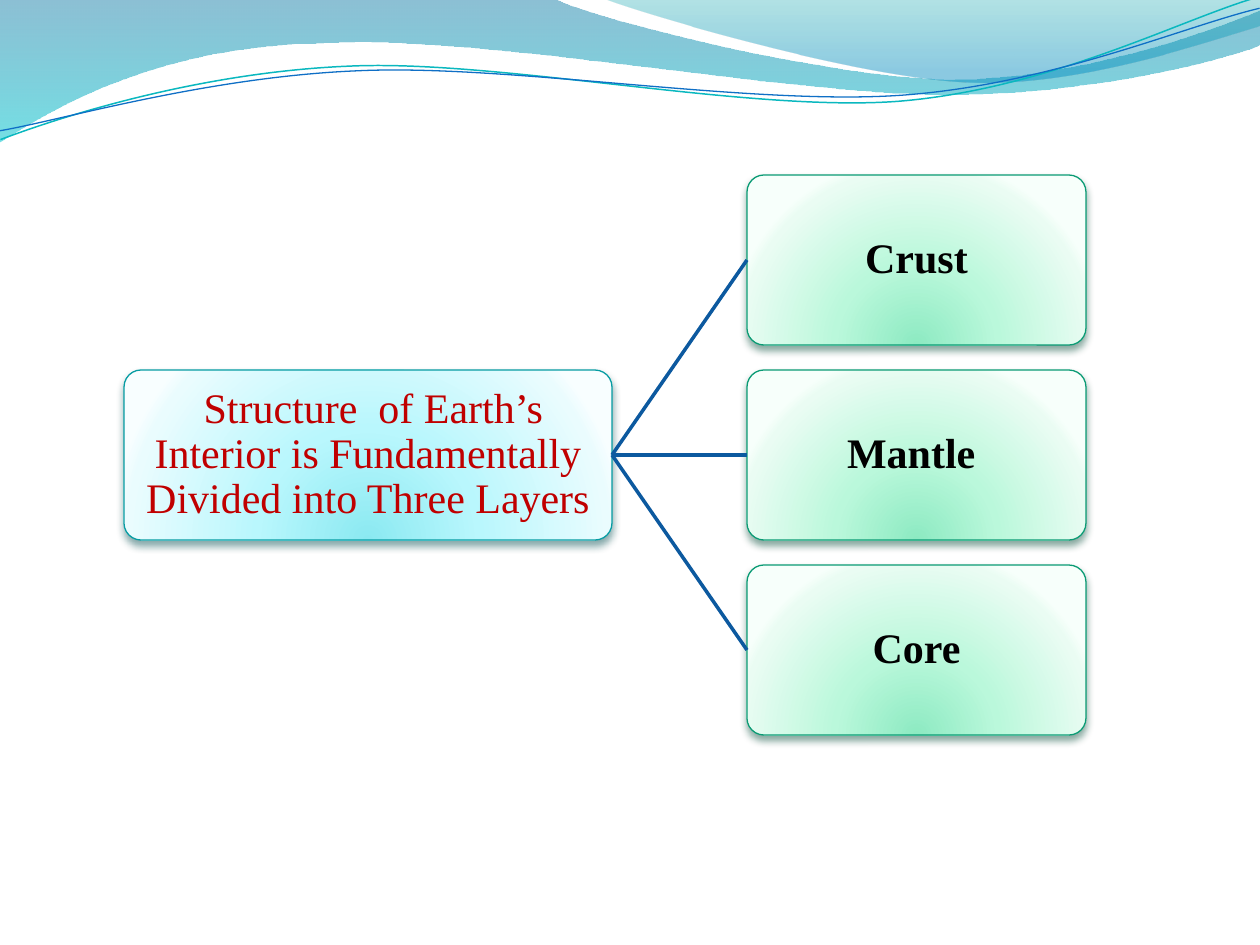
from pptx import Presentation
from pptx.dml.color import RGBColor
from pptx.enum.shapes import MSO_CONNECTOR, MSO_SHAPE
from pptx.enum.text import MSO_ANCHOR, PP_ALIGN
from pptx.oxml import parse_xml
from pptx.oxml.ns import nsdecls, qn
from pptx.util import Emu, Pt

STRAIGHT = MSO_CONNECTOR.STRAIGHT
ROUNDED = MSO_SHAPE.ROUNDED_RECTANGLE
MIDDLE = MSO_ANCHOR.MIDDLE
CENTER = PP_ALIGN.CENTER
LEFT_SIDE, RIGHT_SIDE = 1, 3

SCALE = 914400 / 126
FONT = "Times New Roman"
WAVE_TILT = -2.7

RED = RGBColor(0xC0, 0x00, 0x00)
BLACK = RGBColor(0x00, 0x00, 0x00)
LINK_BLUE = RGBColor(0x0C, 0x59, 0x9F)
WAVE_TEAL = RGBColor(0x0A, 0xB8, 0xBF)
WAVE_BLUE = RGBColor(0x0F, 0x6F, 0xC6)
CYAN_LINE = RGBColor(0x06, 0x9C, 0xA3)
CYAN_SHADOW = RGBColor(0x02, 0x4B, 0x4E)
GREEN_LINE = RGBColor(0x0A, 0x9B, 0x74)
GREEN_SHADOW = RGBColor(0x04, 0x4A, 0x37)

# Gradient stops: position in %, colour, opacity in %
RIBBON_WIDE = [(0, RGBColor(0x00, 0x74, 0xA1), 45), (100, RGBColor(0x00, 0xC6, 0xCF), 55)]
RIBBON_RIGHT = [(0, RGBColor(0x00, 0xA1, 0xA9), 30), (80, RGBColor(0x00, 0x8B, 0xBF), 45)]
CYAN_GLOW = [(0, RGBColor(0x8B, 0xE9, 0xF1), 100), (43, RGBColor(0xB9, 0xF7, 0xFD), 100),
             (93, RGBColor(0xEA, 0xFC, 0xFE), 100), (100, RGBColor(0xF8, 0xFE, 0xFF), 100)]
GREEN_GLOW = [(0, RGBColor(0x8D, 0xEA, 0xC2), 100), (43, RGBColor(0xBA, 0xF8, 0xDB), 100),
              (93, RGBColor(0xEA, 0xFC, 0xF3), 100), (100, RGBColor(0xF7, 0xFF, 0xFB), 100)]

DOWNWARD = '<a:lin ang="5400000" scaled="0"/>'
FROM_BELOW = ('<a:path path="circle"><a:fillToRect l="50000" t="130000" '
              'r="50000" b="-30000"/></a:path>')


def px(n):
    return Emu(round(n * SCALE))


def set_gradient(shape, stops, direction):
    """Put a gradient right after the geometry of a shape that has no fill yet."""
    gs = "".join(f'<a:gs pos="{pos * 1000}"><a:srgbClr val="{color}">'
                 f'<a:alpha val="{alpha * 1000}"/></a:srgbClr></a:gs>'
                 for pos, color, alpha in stops)
    shape._element.spPr.insert(2, parse_xml(
        f'<a:gradFill {nsdecls("a")} rotWithShape="1"><a:gsLst>{gs}</a:gsLst>'
        f'{direction}</a:gradFill>'))


def set_shadow(shape, color):
    shape.shadow.inherit = False
    shape._element.spPr.find(qn("a:effectLst")).append(parse_xml(
        f'<a:outerShdw {nsdecls("a")} blurRad="{Pt(4.5)}" dist="{Pt(3)}" dir="5400000" '
        f'rotWithShape="0"><a:srgbClr val="{color}"><a:alpha val="48000"/>'
        '</a:srgbClr></a:outerShdw>'))


def add_path(s, x, y, start, segments, close):
    """Draw a path: a pair is a straight step, six numbers a Bezier curve."""
    builder = s.shapes.build_freeform(px(x + start[0]), px(y + start[1]))
    for seg in segments:
        points = [(px(x + u), px(y + v)) for u, v in zip(seg[::2], seg[1::2])]
        builder.add_line_segments(points, close=False)
    if close:
        builder.add_line_segments([], close=True)
    sp = builder.convert_to_shape()
    steps = iter(list(sp._element.iter(qn("a:lnTo"))))
    for seg in segments:
        step = next(steps)
        if len(seg) == 6:
            step.tag = qn("a:cubicBezTo")
            for control in (next(steps), next(steps)):
                step.append(control[0])
                control.getparent().remove(control)
    sp.shadow.inherit = False
    return sp


def add_ribbon(s, x, y, start, segments, stops):
    sp = add_path(s, x, y, start, segments, True)
    set_gradient(sp, stops, DOWNWARD)
    sp.line.fill.background()


def add_wave(s, x, y, start, segments, color, width):
    sp = add_path(s, x, y, start, segments, False)
    sp.rotation = WAVE_TILT
    sp.fill.background()
    sp.line.color.rgb = color
    sp.line.width = Pt(width)


def add_wave_header(s, x, y):
    add_ribbon(s, x, y, (0, 0),
               [(554, -1), (600, 21, 837, 79, 955, 79), (1074, 79, 1207, 33, 1260, 11),
                (1261, 45), (1239, 55, 1096, 96, 940, 94), (784, 94, 481, 35, 324, 43),
                (163, 45, 58, 105, -1, 142)], RIBBON_WIDE)
    add_ribbon(s, x, y, (604, -1),
               [(641, 14, 859, 78, 969, 82), (1079, 87, 1211, 40, 1260, 26), (1260, 0)],
               RIBBON_RIGHT)
    add_wave(s, x, y, (-2, 110),
             [(59, 90, 200, 52, 350, 53), (499, 53, 745, 118, 896, 114),
              (1049, 109, 1184, 45, 1260, 27)], WAVE_TEAL, 0.85)
    add_wave(s, x, y, (-2, 101),
             [(57, 94, 207, 57, 358, 58), (509, 58, 750, 112, 902, 108),
              (1052, 104, 1187, 52, 1262, 38)], WAVE_BLUE, 0.75)


def add_node(s, x, y, w, h, text, stops, line, shadow, color, bold):
    sp = s.shapes.add_shape(ROUNDED, px(x), px(y), px(w), px(h))
    sp.adjustments[0] = 0.1
    set_gradient(sp, stops, FROM_BELOW)
    sp.line.color.rgb = line
    sp.line.width = Pt(0.75)
    set_shadow(sp, shadow)
    tf = sp.text_frame
    tf.word_wrap = True
    tf.vertical_anchor = MIDDLE
    tf.margin_left = tf.margin_right = tf.margin_top = tf.margin_bottom = px(3)
    p = tf.paragraphs[0]
    p.alignment = CENTER
    p.line_spacing = 0.9
    r = p.add_run()
    r.text = text
    r.font.name = FONT
    r.font.size = Pt(24)
    r.font.bold = bold
    r.font.color.rgb = color
    return sp


def add_link(s, parent, child):
    link = s.shapes.add_connector(STRAIGHT, 0, 0, 0, 0)
    link.begin_connect(parent, RIGHT_SIDE)
    link.end_connect(child, LEFT_SIDE)
    link.line.color.rgb = LINK_BLUE
    link.line.width = Pt(2)
    link._element.spPr.append(parse_xml(f'<a:effectLst {nsdecls("a")}/>'))


def add_layer_tree(s, x, y, w, h, topic, layers):
    node_h, root_w, layer_w = 170, 488, 339
    pitch = (h - node_h) / (len(layers) - 1)
    root = add_node(s, x, y + (h - node_h) / 2, root_w, node_h, topic,
                    CYAN_GLOW, CYAN_LINE, CYAN_SHADOW, RED, False)
    for i, layer in enumerate(layers):
        node = add_node(s, x + w - layer_w, y + i * pitch, layer_w, node_h, layer,
                        GREEN_GLOW, GREEN_LINE, GREEN_SHADOW, BLACK, True)
        add_link(s, root, node)


def main():
    prs = Presentation()
    prs.slide_width, prs.slide_height = px(1260), px(945)
    s = prs.slides.add_slide(prs.slide_layouts[6])
    add_wave_header(s, 0, 0)
    add_layer_tree(s, 124, 175, 962, 560,
                   " Structure  of Earth’s Interior is Fundamentally Divided into Three Layers",
                   ["Crust", "Mantle ", "Core"])
    prs.save("out.pptx")


if __name__ == "__main__":
    main()
